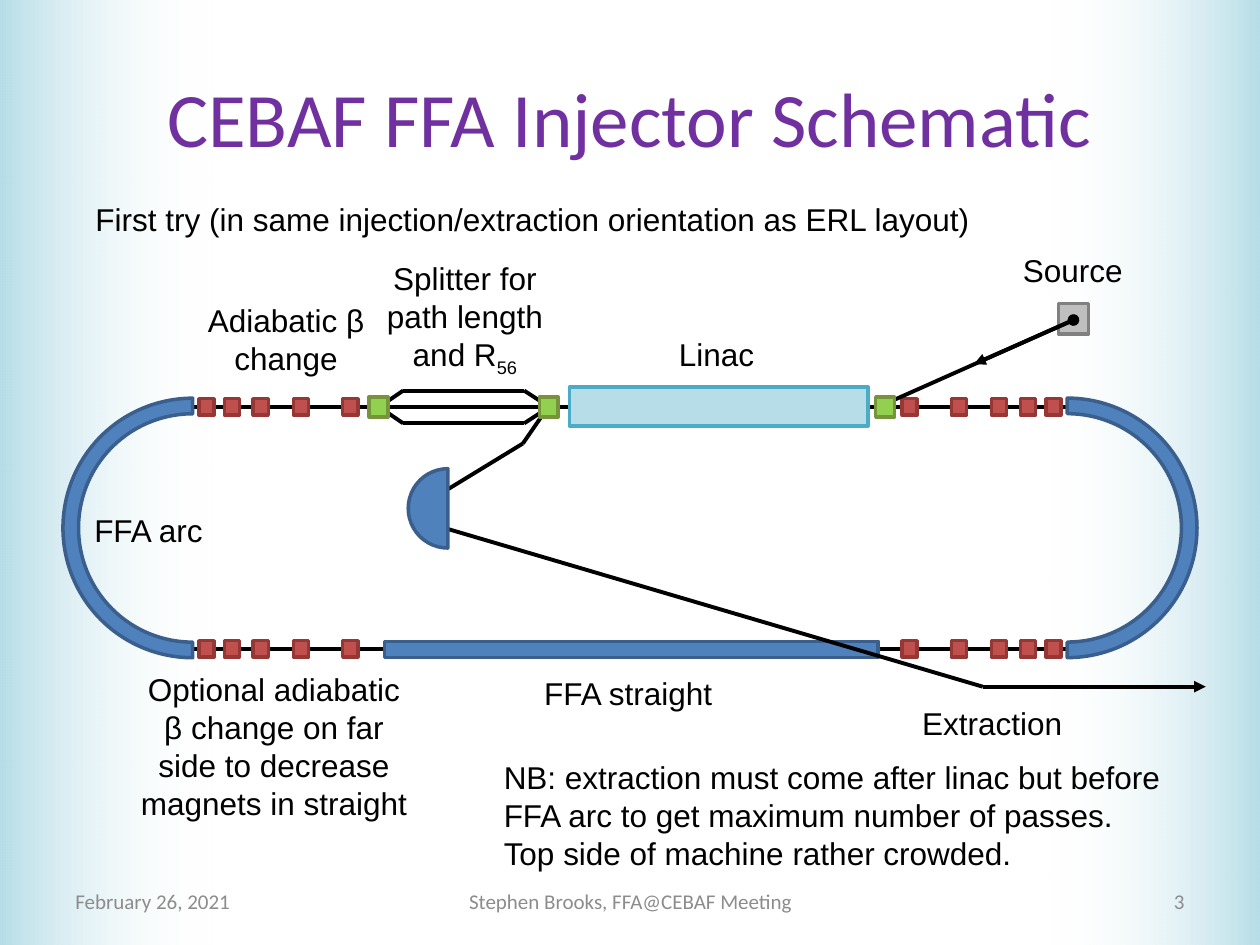
import dataclasses

import lxml.etree
import pptx
import pptx.dml.color
import pptx.enum.shapes
import pptx.enum.text
import pptx.oxml.ns
import pptx.util

SHAPE = pptx.enum.shapes.MSO_SHAPE
ALIGN = pptx.enum.text.PP_ALIGN
ANCHOR = pptx.enum.text.MSO_ANCHOR
COLS, ROWS = 100, 75


@dataclasses.dataclass(frozen=True)
class Theme:
    ink: str = "000000"
    title: str = "7030A0"
    muted: str = "8C8C8C"
    edge: str = "B7DEE8"
    paper: str = "FFFFFF"
    arc: tuple = ("4F81BD", "3A5F8C")
    magnet: tuple = ("C0504D", "953735")
    junction: tuple = ("92D050", "77933C")
    linac: tuple = ("B7DEE8", "4BACC6")
    source: tuple = ("BFBFBF", "808080")
    heading_font: str = "Calibri"
    body_font: str = "Arial"
    title_size: int = 44
    body_size: int = 18
    footer_size: int = 12
    outline: float = 2
    beam: float = 2.25


def rgb(value):
    return pptx.dml.color.RGBColor.from_string(value)


class Board:
    def __init__(self, prs, theme):
        self.theme = theme
        self.slide = prs.slides.add_slide(prs.slide_layouts[6])
        self.col = prs.slide_width / COLS
        self.row = prs.slide_height / ROWS

    def place(self, x, y):
        return round(x * self.col), round(y * self.row)

    def shape(self, kind, x, y, w, h, colors=None, rotation=0, adjust=()):
        sp = self.slide.shapes.add_shape(kind, *self.place(x, y), *self.place(w, h))
        sp.shadow.inherit = False
        sp.rotation = rotation
        for i, value in enumerate(adjust):
            sp.adjustments[i] = value
        if colors:
            fill, line = colors
            sp.fill.solid()
            sp.fill.fore_color.rgb = rgb(fill)
            sp.line.color.rgb = rgb(line)
            sp.line.width = pptx.util.Pt(self.theme.outline)
        return sp

    def fade(self, x, w, rotation):
        sp = self.shape(SHAPE.RECTANGLE, x, 0, w, ROWS, rotation=rotation)
        sp.line.fill.background()
        sp.fill.gradient()
        sp.fill.gradient_angle = 0
        for stop, color in zip(sp.fill.gradient_stops, (self.theme.edge, self.theme.paper)):
            stop.color.rgb = rgb(color)
        qn = pptx.oxml.ns.qn
        clear = sp._element.findall(".//" + qn("a:srgbClr"))[-1]
        lxml.etree.SubElement(clear, qn("a:alpha"), val="0")

    def beam(self, *points, tail=None):
        qn = pptx.oxml.ns.qn
        for start, end in zip(points, points[1:]):
            line = self.slide.shapes.add_connector(
                pptx.enum.shapes.MSO_CONNECTOR.STRAIGHT, *self.place(*start), *self.place(*end))
            line.line.color.rgb = rgb(self.theme.ink)
            line.line.width = pptx.util.Pt(self.theme.beam)
            lxml.etree.SubElement(line._element.spPr, qn("a:effectLst"))
            if tail and end == points[-1]:
                lxml.etree.SubElement(line.line._get_or_add_ln(), qn("a:tailEnd"), type=tail)

    def text(self, x, y, w, h, *paragraphs, align=ALIGN.LEFT, anchor=ANCHOR.TOP,
             font=None, size=None, color=None, wrap=True, subscript=None):
        box = self.slide.shapes.add_textbox(*self.place(x, y), *self.place(w, h))
        tf = box.text_frame
        tf.word_wrap = wrap
        tf.vertical_anchor = anchor
        for i, words in enumerate(paragraphs):
            p = tf.add_paragraph() if i else tf.paragraphs[0]
            p.alignment = align
            p.font.name = font or self.theme.body_font
            p.font.size = pptx.util.Pt(size or self.theme.body_size)
            p.font.color.rgb = rgb(color or self.theme.ink)
            p.add_run().text = words
        if subscript:
            r = p.add_run()
            r.text = subscript
            r.font._element.set("baseline", "-25000")

    def label(self, x, y, w, words):
        self.text(x, y, w, 4, words, wrap=False)

    def heading(self, x, y, w, h, words, size, color, align):
        self.text(x, y, w, h, words, align=align, anchor=ANCHOR.MIDDLE,
                  font=self.theme.heading_font, size=size, color=color)


def draw_ring(board):
    theme = board.theme
    top, bottom = 32.3, 51.5
    for y in (top, bottom):
        board.beam((15.2, y), (84.8, y))
    for side in (-1.3, 1.3):
        board.beam((30.1, top), (32, top + side), (41.6, top + side), (43.6, top))
    board.beam((43.5, top), (41.5, 35.2), (35.6, 38.8))

    for x, rotation in ((5, 270), (74.4, 90)):
        board.shape(SHAPE.BLOCK_ARC, x, 31.6, 20.6, 20.6, theme.arc, rotation, (108, 0, 0.06))
    board.shape(SHAPE.RECTANGLE, 45.2, 30.7, 23.7, 3.1, theme.linac)
    board.shape(SHAPE.RECTANGLE, 30.5, 50.9, 39.2, 1.3, theme.arc)

    width, height = 1.2, 1.3
    for y in (top, bottom):
        for x in (15.8, 17.8, 20.1, 23.3, 27.2):
            for left in (x, COLS - x - width):
                board.shape(SHAPE.RECTANGLE, left, y - height / 2, width, height, theme.magnet)


def draw_transport(board):
    theme = board.theme
    source = (85.2, 25.4)
    board.shape(SHAPE.RECTANGLE, 84, 24.1, 2.4, 2.4, theme.source)
    board.beam((69.7, 32.3), source, tail="oval")
    board.beam(source, (77.3, 28.9), tail="triangle")
    for x in (29.3, 42.8, 69.5):
        board.shape(SHAPE.RECTANGLE, x, 31.5, 1.5, 1.6, theme.junction)
    board.beam((35.6, 42), (78, 54.5), (95.7, 54.5), tail="triangle")
    board.shape(SHAPE.PIE, 32.4, 37.2, 6.3, 6.3, theme.arc, adjust=(54, 162))


def draw_text(board):
    theme = board.theme
    board.heading(5, 3, 90, 12.5, "CEBAF FFA Injector Schematic",
                  theme.title_size, theme.title, ALIGN.CENTER)
    for x, w, words, align in (
        (5, 23.3, "February 26, 2021", ALIGN.LEFT),
        (34.2, 31.7, "Stephen Brooks, FFA@CEBAF Meeting", ALIGN.CENTER),
        (71.7, 23.3, "3", ALIGN.RIGHT),
    ):
        board.heading(x, 69.5, w, 4, words, theme.footer_size, theme.muted, align)

    for x, y, w, words in (
        (6.6, 15.4, 71.4, "First try (in same injection/extraction orientation as ERL layout)"),
        (80.2, 19.4, 10, "Source"),
        (72.2, 55.4, 13.2, "Extraction"),
        (52.9, 26.1, 8.1, "Linac"),
        (6.5, 40.1, 10.7, "FFA arc"),
        (42.2, 53, 15.5, "FFA straight"),
    ):
        board.label(x, y, w, words)

    board.text(28.7, 20.1, 16.4, 10.1, "Splitter for path length and R",
               align=ALIGN.CENTER, subscript="56")
    board.text(14.6, 23.4, 16.2, 7.1, "Adiabatic β change", align=ALIGN.CENTER)
    board.text(10.1, 52.7, 23.3, 13.1,
               "Optional adiabatic β change on far side to decrease magnets in straight",
               align=ALIGN.CENTER)
    board.text(39, 59.7, 56.3, 10.1,
               "NB: extraction must come after linac but before FFA arc "
               "to get maximum number of passes.",
               "Top side of machine rather crowded.")


def main():
    prs = pptx.Presentation()
    prs.slide_width = pptx.util.Inches(10)
    prs.slide_height = pptx.util.Inches(7.5)
    board = Board(prs, Theme())
    board.fade(83.1, 16.9, 180)
    board.fade(0, 16.9, 0)
    draw_ring(board)
    draw_transport(board)
    draw_text(board)
    prs.save("out.pptx")


if __name__ == "__main__":
    main()
